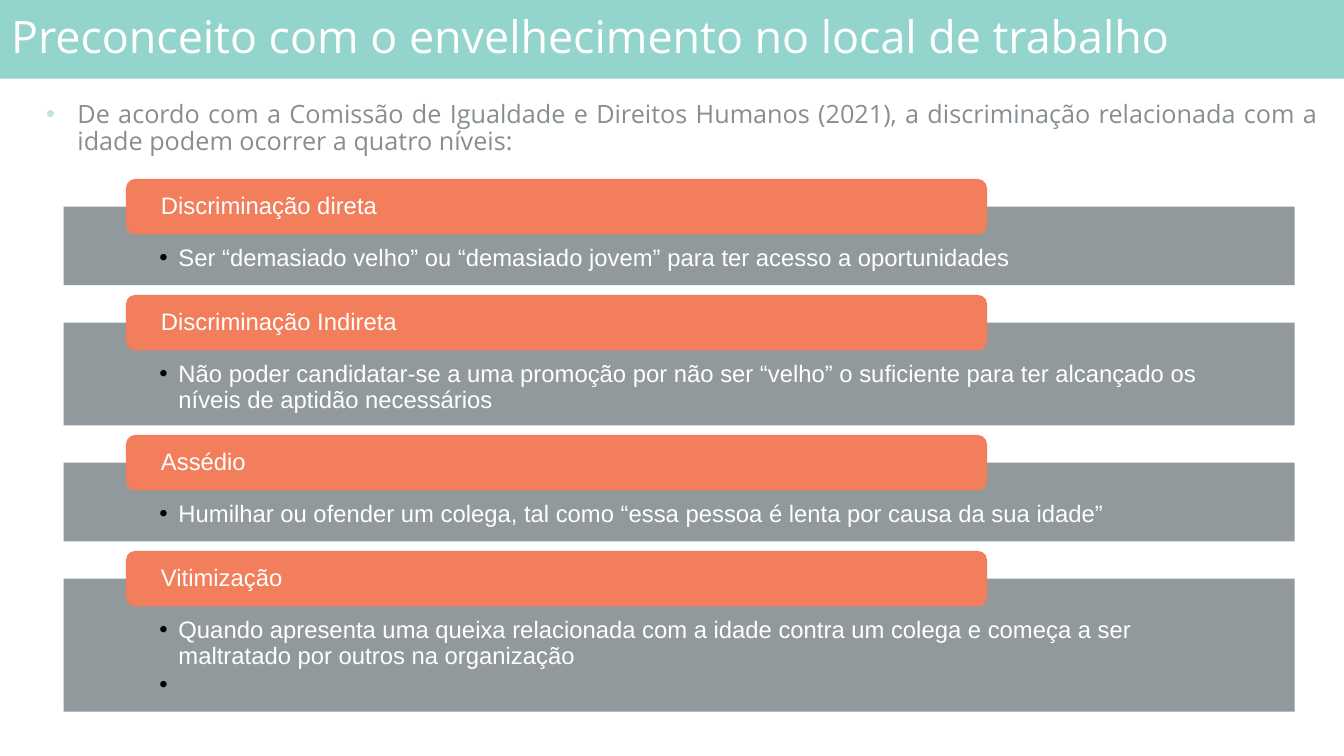
from lxml import etree
from pptx import Presentation
from pptx.dml.color import RGBColor
from pptx.enum.shapes import MSO_SHAPE
from pptx.enum.text import MSO_ANCHOR, PP_ALIGN
from pptx.oxml.ns import qn
from pptx.util import Inches, Pt

RECTANGLE, ROUNDED = MSO_SHAPE.RECTANGLE, MSO_SHAPE.ROUNDED_RECTANGLE
TOP, MIDDLE = MSO_ANCHOR.TOP, MSO_ANCHOR.MIDDLE
LEFT, JUSTIFY = PP_ALIGN.LEFT, PP_ALIGN.JUSTIFY

# Content
TITLE = "Preconceito com o envelhecimento no local de trabalho"
INTRO = ("De acordo com a Comissão de Igualdade e Direitos Humanos (2021), a discriminação "
         "relacionada com a idade podem ocorrer a quatro níveis:")
# Heading, panel height, bullets (the last panel ends with an open bullet)
LEVELS = [
    ("Discriminação direta", 0.78,
     ["Ser “demasiado velho” ou “demasiado jovem” para ter acesso a oportunidades"]),
    ("Discriminação Indireta", 1.02,
     ["Não poder candidatar-se a uma promoção por não ser “velho” o suficiente para ter "
      "alcançado os níveis de aptidão necessários"]),
    ("Assédio", 0.78,
     ["Humilhar ou ofender um colega, tal como “essa pessoa é lenta por causa da sua idade”"]),
    ("Vitimização", 1.32,
     ["Quando apresenta uma queixa relacionada com a idade contra um colega e começa a ser "
      "maltratado por outros na organização", "\t"]),
]

# Style
WHITE = RGBColor(0xFF, 0xFF, 0xFF)
BLACK = RGBColor(0x00, 0x00, 0x00)
GREY = RGBColor(0x86, 0x8E, 0x93)
CORAL = RGBColor(0xF2, 0x7E, 0x5C)
TEAL = RGBColor(0x93, 0xD4, 0xCC)
PALE_TEAL = RGBColor(0xBD, 0xE5, 0xE0)
TITLE_FONT, LEVEL_FONT = "Open Sans", "Arial"

# Layout in inches
PANEL_LEFT, PANEL_WIDTH, FIRST_PANEL_TOP, PANEL_GAP = 0.63, 12.21, 2.05, 0.37
LABEL_LEFT, LABEL_WIDTH, LABEL_HEIGHT = 1.25, 8.54, 0.55


def add_block(slide, kind, box, color):
    shape = slide.shapes.add_shape(kind, *map(Inches, box))
    shape.shadow.inherit = False
    shape.fill.solid()
    shape.fill.fore_color.rgb = color
    shape.line.fill.background()
    return shape


def set_frame(shape, insets, anchor):
    frame = shape.text_frame
    frame.word_wrap = True
    frame.vertical_anchor = anchor
    (frame.margin_left, frame.margin_top,
     frame.margin_right, frame.margin_bottom) = map(Inches, insets)
    return frame


def add_bullet(paragraph, color, margin, hanging):
    properties = paragraph._p.get_or_add_pPr()
    properties.set("marL", str(Inches(margin)))
    properties.set("indent", str(-Inches(hanging)))
    bullet_color = etree.SubElement(properties, qn("a:buClr"))
    etree.SubElement(bullet_color, qn("a:srgbClr"), val=str(color))
    etree.SubElement(properties, qn("a:buFont"), typeface="Arial")
    etree.SubElement(properties, qn("a:buChar"), char="•")


def write(paragraph, text, font, size, color, align=LEFT, before=0):
    paragraph.text = text
    paragraph.alignment = align
    paragraph.line_spacing = 0.9
    paragraph.space_before = Pt(before)
    paragraph.font.name = font
    paragraph.font.size = Pt(size)
    paragraph.font.color.rgb = color


def add_level(slide, top, heading, height, bullets):
    panel = add_block(slide, RECTANGLE, (PANEL_LEFT, top, PANEL_WIDTH, height), GREY)
    panel_color = panel.fill._xPr.find(".//" + qn("a:srgbClr"))
    etree.SubElement(panel_color, qn("a:alpha"), val="90000")
    frame = set_frame(panel, (0.95, 0.39, 0.95, 0.13), TOP)
    for index, text in enumerate(bullets):
        paragraph = frame.add_paragraph() if index else frame.paragraphs[0]
        add_bullet(paragraph, BLACK, 0.19, 0.19)
        write(paragraph, text, LEVEL_FONT, 17, WHITE, before=2.5 if index else 0)

    label_box = (LABEL_LEFT, top - LABEL_HEIGHT / 2, LABEL_WIDTH, LABEL_HEIGHT)
    label = add_block(slide, ROUNDED, label_box, CORAL)
    label.adjustments[0] = 0.167
    frame = set_frame(label, (0.32, 0, 0.32, 0), MIDDLE)
    write(frame.paragraphs[0], heading, LEVEL_FONT, 17, WHITE)


def main():
    presentation = Presentation()
    presentation.slide_width, presentation.slide_height = Inches(13.33), Inches(7.5)
    slide = presentation.slides.add_slide(presentation.slide_layouts[6])

    # Introduction
    intro = slide.shapes.add_textbox(*map(Inches, (0.11, 0.96, 13.06, 0.7)))
    paragraph = set_frame(intro, (0.1, 0.05, 0.1, 0.05), TOP).paragraphs[0]
    add_bullet(paragraph, PALE_TEAL, 0.56, 0.31)
    write(paragraph, INTRO, TITLE_FONT, 18, GREY, JUSTIFY, before=10)

    # Four levels, stacked with equal gaps
    top = FIRST_PANEL_TOP
    for heading, height, bullets in LEVELS:
        add_level(slide, top, heading, height, bullets)
        top += height + PANEL_GAP

    # Title band
    band = add_block(slide, RECTANGLE, (0, 0, 13.33, 0.78), TEAL)
    frame = set_frame(band, (0.11, 0.06, 0.06, 0.06), MIDDLE)
    write(frame.paragraphs[0], TITLE, TITLE_FONT, 32, WHITE)

    presentation.save("out.pptx")


if __name__ == "__main__":
    main()
